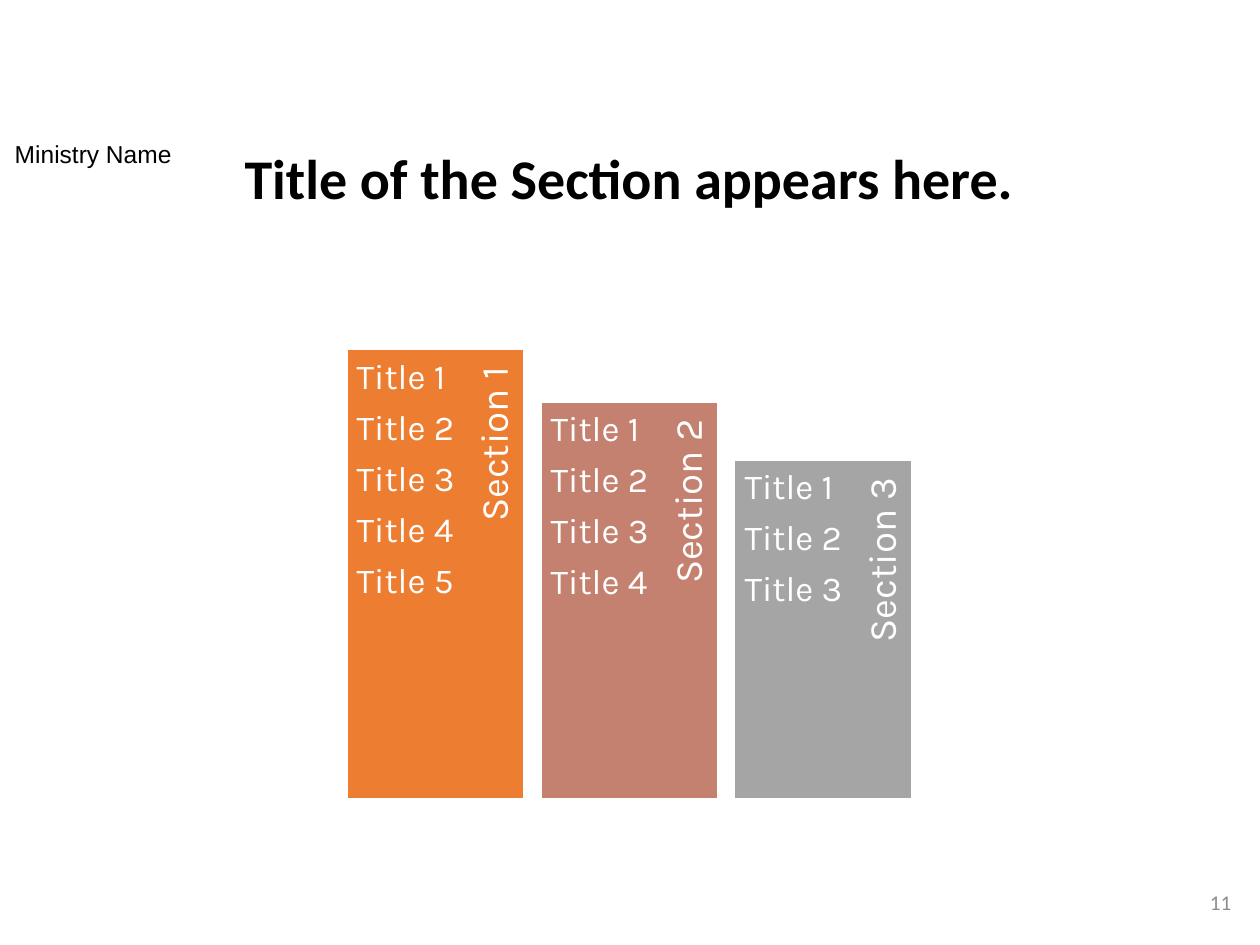
from pptx import Presentation
from pptx import util as u
from pptx.dml.color import RGBColor
from pptx.enum import shapes, text

BOTTOM, FIRST_LEFT, STEP, BAR_WIDTH = 16.1, 6.99, 3.91, 3.58
WHITE = "FFFFFF"
SECTIONS = [
    ("Section 1", 5, 7.04, "ED7D31"),
    ("Section 2", 4, 8.1, "C48170"),
    ("Section 3", 3, 9.27, "A5A5A5"),
]


def rgb(value):
    return RGBColor.from_string(value)


def add_text(s, lines, left, top, width, height, size, font="Calibri",
             color="000000", bold=False, align=text.PP_ALIGN.LEFT,
             anchor=text.MSO_ANCHOR.TOP, spacing=0.9, after=0,
             insets=(0.25, 0.13, 0.25, 0.13), rotation=0):
    sp = s.shapes.add_textbox(u.Cm(left), u.Cm(top), u.Cm(width), u.Cm(height))
    sp.rotation = rotation
    tf = sp.text_frame
    tf.word_wrap = True
    tf.vertical_anchor = anchor
    tf.margin_left, tf.margin_top, tf.margin_right, tf.margin_bottom = map(u.Cm, insets)
    for i, line in enumerate(lines):
        p = tf.add_paragraph() if i else tf.paragraphs[0]
        p.alignment = align
        p.line_spacing = spacing
        p.space_after = u.Pt(after)
        r = p.add_run()
        r.text = line
        r.font.name, r.font.size, r.font.bold = font, u.Pt(size), bold
        r.font.color.rgb = rgb(color)


def add_bar(s, left, top, height, color):
    sp = s.shapes.add_shape(shapes.MSO_SHAPE.RECTANGLE, u.Cm(left), u.Cm(top),
                            u.Cm(BAR_WIDTH), u.Cm(height))
    sp.shadow.inherit = False
    sp.fill.solid()
    sp.fill.fore_color.rgb = rgb(color)
    sp.line.color.rgb = rgb(WHITE)
    sp.line.width = u.Pt(1)


def add_section(s, name, count, left, top, color):
    height = BOTTOM - top
    add_bar(s, left, top, height, color)
    length, thickness = 0.9 * height, 0.94
    center_x, center_y = left + 3.04, top + length / 2
    add_text(s, [name], center_x - length / 2, center_y - thickness / 2,
             length, thickness, 22, font="Karla", color=WHITE,
             align=text.PP_ALIGN.RIGHT, anchor=text.MSO_ANCHOR.MIDDLE,
             insets=(0.23, 0, 0.36, 0.08), rotation=270)
    titles = [f"Title {n}" for n in range(1, count + 1)]
    add_text(s, titles, left, top, 2.54, height, 20, font="Karla", color=WHITE,
             after=7.5, insets=(0.2,) * 4)


def main():
    prs = Presentation()
    prs.slide_width, prs.slide_height = u.Cm(25.4), u.Cm(19.05)
    s = prs.slides.add_slide(prs.slide_layouts[6])
    add_text(s, ["11"], 19.35, 17.68, 5.72, 1.02, 12, color="8C8C8C", spacing=1,
             align=text.PP_ALIGN.RIGHT, anchor=text.MSO_ANCHOR.MIDDLE)
    add_text(s, ["Title of the Section appears here."], 4.19, 2.92, 16.99, 2.01,
             32, bold=True, align=text.PP_ALIGN.CENTER)
    add_text(s, ["Ministry Name"], 0, 2.74, 3.76, 1.65, 14, font="Arial",
             align=text.PP_ALIGN.CENTER)
    for i, (name, count, top, color) in enumerate(SECTIONS):
        add_section(s, name, count, FIRST_LEFT + i * STEP, top, color)
    prs.save("out.pptx")


if __name__ == "__main__":
    main()
